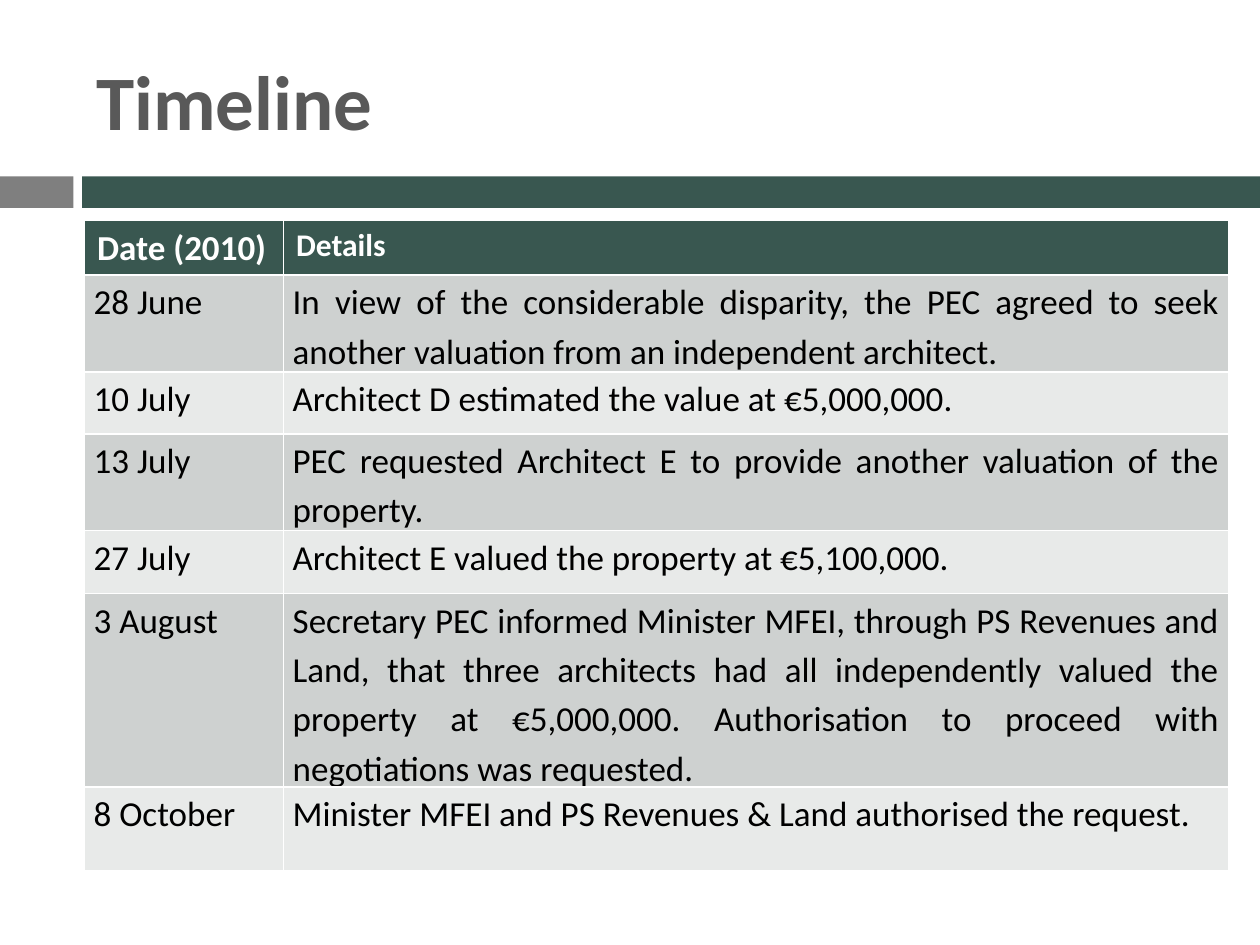
from pptx import Presentation
from pptx.dml.color import RGBColor
from pptx.enum import shapes, text
from pptx.util import Pt

GREEN, GREY, TITLE_GREY = "395750", "7F7F7F", "595959"
WHITE, BLACK = "FFFFFF", "000000"
BANDS = ("CED1D0", "E8EAE9")
LEFT, JUSTIFY = text.PP_ALIGN.LEFT, text.PP_ALIGN.JUSTIFY

HEADINGS = (("Date (2010)", 20), ("Details", 18))
EVENTS = (
    ("28 June", LEFT, 48, "In view of the considerable disparity, the PEC agreed to seek "
     "another valuation from an independent architect."),
    ("10 July", LEFT, 35.5, "Architect D estimated the value at €5,000,000."),
    ("13 July", LEFT, 36, "PEC requested Architect E to provide another valuation of the property."),
    ("27 July", JUSTIFY, 36, "Architect E valued the property at €5,100,000."),
    ("3 August", JUSTIFY, 48, "Secretary PEC informed Minister MFEI, through PS Revenues and Land, "
     "that three architects had all independently valued the property at €5,000,000. "
     "Authorisation to proceed with negotiations was requested."),
    ("8 October", LEFT, 48, "Minister MFEI and PS Revenues & Land authorised the request."),
)


def paint(part, colour):
    """Give a fill or a font a solid colour from a hex string."""
    if hasattr(part, "solid"):
        part.solid()
        part.fore_color.rgb = RGBColor.from_string(colour)
    else:
        part.color.rgb = RGBColor.from_string(colour)


def apply(target, values):
    """Set each named attribute on the target."""
    for name, value in values.items():
        setattr(target, name, value)


def write(frame, wording, size, colour, bold=False, **layout):
    """Write one formatted paragraph into a text frame."""
    paragraph = frame.paragraphs[0]
    apply(paragraph, layout)
    run = paragraph.add_run()
    run.text = wording
    apply(run.font, {"name": "Calibri", "size": Pt(size), "bold": bold})
    paint(run.font, colour)


def add_title(slide, left, top, width, height):
    """Place the slide title, centred vertically in its box."""
    frame = slide.shapes.add_textbox(Pt(left), Pt(top), Pt(width), Pt(height)).text_frame
    apply(frame, {"word_wrap": True, "vertical_anchor": text.MSO_ANCHOR.MIDDLE})
    write(frame, "Timeline", 44, TITLE_GREY, True)


def add_divider(slide, left, top, width, height):
    """Draw a short grey block and a long green bar with a gap between."""
    block, gap = 42, 5
    start = block + gap
    for offset, length, colour in ((0, block, GREY), (start, width - start, GREEN)):
        bar = slide.shapes.add_shape(shapes.MSO_SHAPE.RECTANGLE, Pt(left + offset),
                                     Pt(top), Pt(length), Pt(height))
        bar.shadow.inherit = False
        paint(bar.fill, colour)
        bar.line.fill.background()


def add_timeline(slide, left, top, width, height):
    """Build the table of dates and details with banded rows."""
    table = slide.shapes.add_table(len(EVENTS) + 1, 2, Pt(left), Pt(top),
                                   Pt(width), Pt(height)).table
    date_width = 113.75
    for column, size in zip(table.columns, (date_width, width - date_width)):
        column.width = Pt(size)
    table.rows[0].height = Pt(28)
    for column, (wording, size) in enumerate(HEADINGS):
        cell = table.cell(0, column)
        paint(cell.fill, GREEN)
        write(cell.text_frame, wording, size, WHITE, True, alignment=JUSTIFY)
    margins = {"margin_left": Pt(5.3), "margin_right": Pt(5.3), "margin_top": 0, "margin_bottom": 0}
    for row, (date, date_alignment, row_height, details) in enumerate(EVENTS, 1):
        table.rows[row].height = Pt(row_height)
        for column, (wording, alignment) in enumerate(((date, date_alignment), (details, JUSTIFY))):
            cell = table.cell(row, column)
            apply(cell, margins)
            paint(cell.fill, BANDS[(row - 1) % 2])
            write(cell.text_frame, wording, 20, BLACK, alignment=alignment, line_spacing=1.15)


def main():
    """Build the timeline slide and save it."""
    presentation = Presentation()
    apply(presentation, {"slide_width": Pt(720), "slide_height": Pt(540)})
    slide = presentation.slides.add_slide(presentation.slide_layouts[6])
    add_divider(slide, 0, 100.8, 720, 18)
    add_title(slide, 48, 18, 642, 78)
    add_timeline(slide, 48.25, 126, 653.75, 369)
    presentation.save("out.pptx")


if __name__ == "__main__":
    main()
